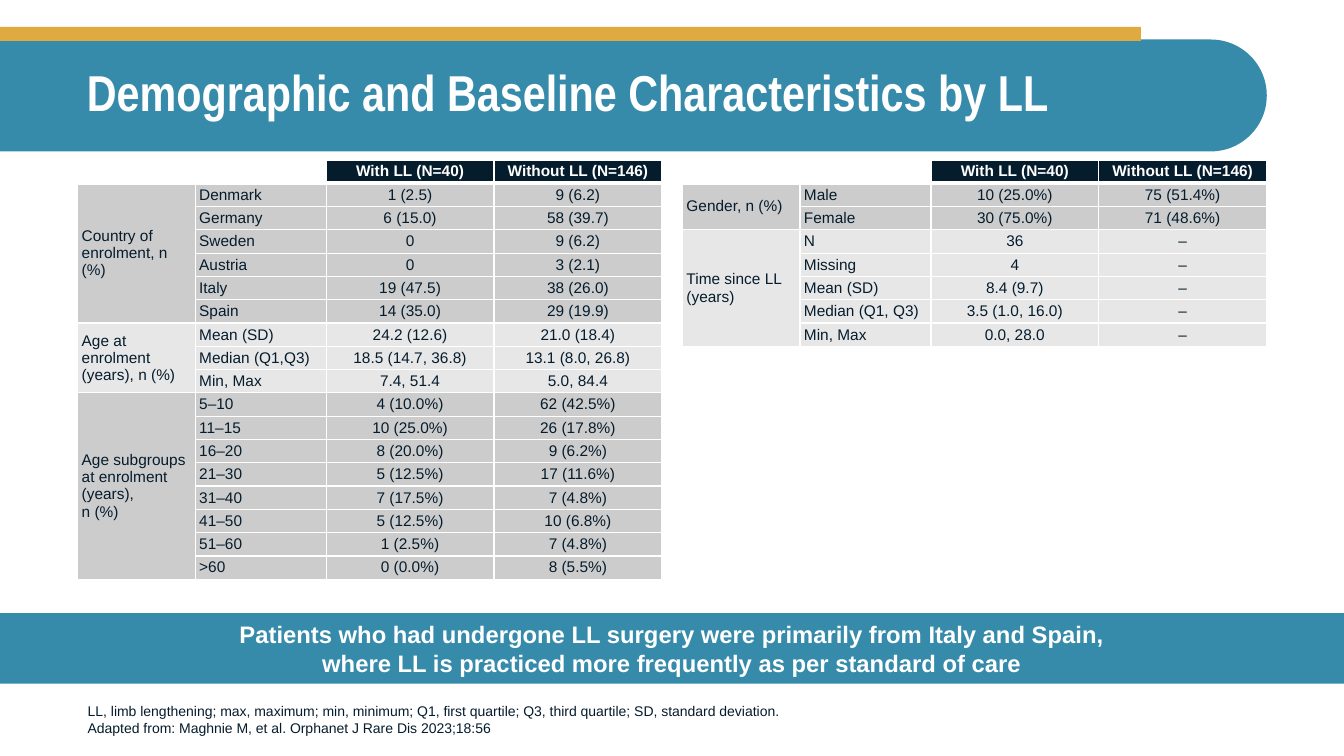
"""Build a slide with demographic and baseline characteristics by limb lengthening status."""
from lxml import etree
from pptx import Presentation
from pptx.dml.color import RGBColor
from pptx.enum.shapes import MSO_SHAPE
from pptx.enum.text import MSO_ANCHOR, PP_ALIGN
from pptx.oxml.ns import qn
from pptx.util import Cm, Pt

LEFT, CENTER = PP_ALIGN.LEFT, PP_ALIGN.CENTER
MIDDLE, BOTTOM = MSO_ANCHOR.MIDDLE, MSO_ANCHOR.BOTTOM
BLUE, GOLD, NAVY, WHITE = "368BAB", "DFAA40", "051C2C", "FFFFFF"
DARK_GREY, LIGHT_GREY = "CCCCCD", "E7E7E8"
COLUMN_WIDTHS = [2.96, 3.3, 4.23, 4.23]
ROW_HEIGHT = 0.57
HEADER = ["", "", "With LL (N=40)", "Without LL (N=146)"]


def paint(fill, color):
    fill.solid()
    fill.fore_color.rgb = RGBColor.from_string(color)


def write(frame, text, size=11, color=NAVY, bold=False, font="Arial", align=LEFT, spacing=1.0):
    frame.word_wrap = True
    for index, line in enumerate(text.split("\n")):
        paragraph = frame.add_paragraph() if index else frame.paragraphs[0]
        paragraph.text = line
        paragraph.alignment = align
        paragraph.line_spacing = spacing
        for run in paragraph.runs:
            run.font.size = Pt(size)
            run.font.name = font
            run.font.bold = bold
            run.font.color.rgb = RGBColor.from_string(color)


presentation = Presentation()
presentation.slide_width = Cm(33.87)
presentation.slide_height = Cm(19.05)
slide = presentation.slides.add_slide(presentation.slide_layouts[6])

bands = [
    (MSO_SHAPE.ROUND_2_SAME_RECTANGLE, 14.55, -13.56, 2.82, 31.93, BLUE),
    (MSO_SHAPE.RECTANGLE, 0, 0.68, 28.75, 0.35, GOLD),
    (MSO_SHAPE.RECTANGLE, 0, 15.45, 33.87, 1.78, BLUE),
]
band_shapes = []
for kind, left, top, width, height, color in bands:
    shape = slide.shapes.add_shape(kind, Cm(left), Cm(top), Cm(width), Cm(height))
    shape.shadow.inherit = False
    paint(shape.fill, color)
    shape.line.fill.background()
    band_shapes.append(shape)

title_band, gold_stripe, message_band = band_shapes
title_band.rotation = 270
title_band.adjustments[0] = 0
title_band.adjustments[1] = 0.5

message_band.text_frame.vertical_anchor = MIDDLE
write(message_band.text_frame,
      "Patients who had undergone LL surgery were primarily from Italy and Spain,\v"
      "where LL is practiced more frequently as per standard of care",
      size=17, color=WHITE, bold=True, align=CENTER)

title = slide.shapes.add_textbox(Cm(1.94), Cm(0.99), Cm(30), Cm(2.8))
title.text_frame.vertical_anchor = MIDDLE
write(title.text_frame, "Demographic and Baseline Characteristics by LL",
      size=36, color=WHITE, bold=True, font="Arial Narrow", spacing=0.9)

footnote = slide.shapes.add_textbox(Cm(1.96), Cm(17.25), Cm(25.1), Cm(1.42))
footnote.text_frame.vertical_anchor = BOTTOM
write(footnote.text_frame,
      "LL, limb lengthening; max, maximum; min, minimum; Q1, first quartile; "
      "Q3, third quartile; SD, standard deviation.\n"
      "Adapted from: Maghnie M, et al. Orphanet J Rare Dis 2023;18:56", size=10)

left_groups = [
    ("Country of enrolment, n (%)", DARK_GREY, [
        ("Denmark", "1 (2.5)", "9 (6.2)"),
        ("Germany", "6 (15.0)", "58 (39.7)"),
        ("Sweden", "0", "9 (6.2)"),
        ("Austria", "0", "3 (2.1)"),
        ("Italy", "19 (47.5)", "38 (26.0)"),
        ("Spain", "14 (35.0)", "29 (19.9)"),
    ]),
    ("Age at enrolment (years), n (%)", LIGHT_GREY, [
        ("Mean (SD)", "24.2 (12.6)", "21.0 (18.4)"),
        ("Median (Q1,Q3)", "18.5 (14.7, 36.8)", "13.1 (8.0, 26.8)"),
        ("Min, Max", "7.4, 51.4", "5.0, 84.4"),
    ]),
    ("Age subgroups at enrolment (years),\vn (%)", DARK_GREY, [
        ("5–10", "4 (10.0%)", "62 (42.5%)"),
        ("11–15", "10 (25.0%)", "26 (17.8%)"),
        ("16–20", "8 (20.0%)", "9 (6.2%)"),
        ("21–30", "5 (12.5%)", "17 (11.6%)"),
        ("31–40", "7 (17.5%)", "7 (4.8%)"),
        ("41–50", "5 (12.5%)", "10 (6.8%)"),
        ("51–60", "1 (2.5%)", "7 (4.8%)"),
        (">60", "0 (0.0%)", "8 (5.5%)"),
    ]),
]
right_groups = [
    ("Gender, n (%)", DARK_GREY, [
        ("Male", "10 (25.0%)", "75 (51.4%)"),
        ("Female", "30 (75.0%)", "71 (48.6%)"),
    ]),
    ("Time since LL (years)", LIGHT_GREY, [
        ("N", "36", "–"),
        ("Missing", "4", "–"),
        ("Mean (SD)", "8.4 (9.7)", "–"),
        ("Median (Q1, Q3)", "3.5 (1.0, 16.0)", "–"),
        ("Min, Max", "0.0, 28.0", "–"),
    ]),
]

for table_left, groups in [(1.96, left_groups), (17.2, right_groups)]:
    rows = [(HEADER, NAVY)]
    spans = []
    for label, color, entries in groups:
        spans.append((len(rows), len(rows) + len(entries) - 1))
        for index, entry in enumerate(entries):
            rows.append(([label if index == 0 else "", *entry], color))

    table = slide.shapes.add_table(len(rows), len(HEADER), Cm(table_left), Cm(4.03),
                                   Cm(sum(COLUMN_WIDTHS)), Cm(ROW_HEIGHT * len(rows))).table
    table.horz_banding = False
    for column, width in zip(table.columns, COLUMN_WIDTHS):
        column.width = Cm(width)

    for row_index, (texts, color) in enumerate(rows):
        table.rows[row_index].height = Cm(ROW_HEIGHT)
        is_header = row_index == 0
        for column_index, text in enumerate(texts):
            cell = table.cell(row_index, column_index)
            cell.vertical_anchor = MIDDLE
            cell.margin_left = cell.margin_right = Cm(0.1)
            cell.margin_top = cell.margin_bottom = Cm(0.06)
            write(cell.text_frame, text, color=WHITE if is_header else NAVY,
                  bold=is_header, align=CENTER if column_index > 1 else LEFT)
            if not text:
                end = etree.SubElement(cell.text_frame.paragraphs[0]._p, qn("a:endParaRPr"))
                end.set("sz", "1100")
            properties = cell._tc.get_or_add_tcPr()
            for side in ("a:lnL", "a:lnR", "a:lnT", "a:lnB"):
                thick = (is_header and side == "a:lnB") or (row_index == 1 and side == "a:lnT")
                border = etree.SubElement(properties, qn(side), w=str(Pt(3 if thick else 1)))
                solid = etree.SubElement(border, qn("a:solidFill"))
                etree.SubElement(solid, qn("a:srgbClr"), val=WHITE)
            paint(cell.fill, WHITE if is_header and not text else color)

    table.cell(0, 0).merge(table.cell(0, 1))
    for first, last in spans:
        table.cell(first, 0).merge(table.cell(last, 0))

presentation.save("out.pptx")
